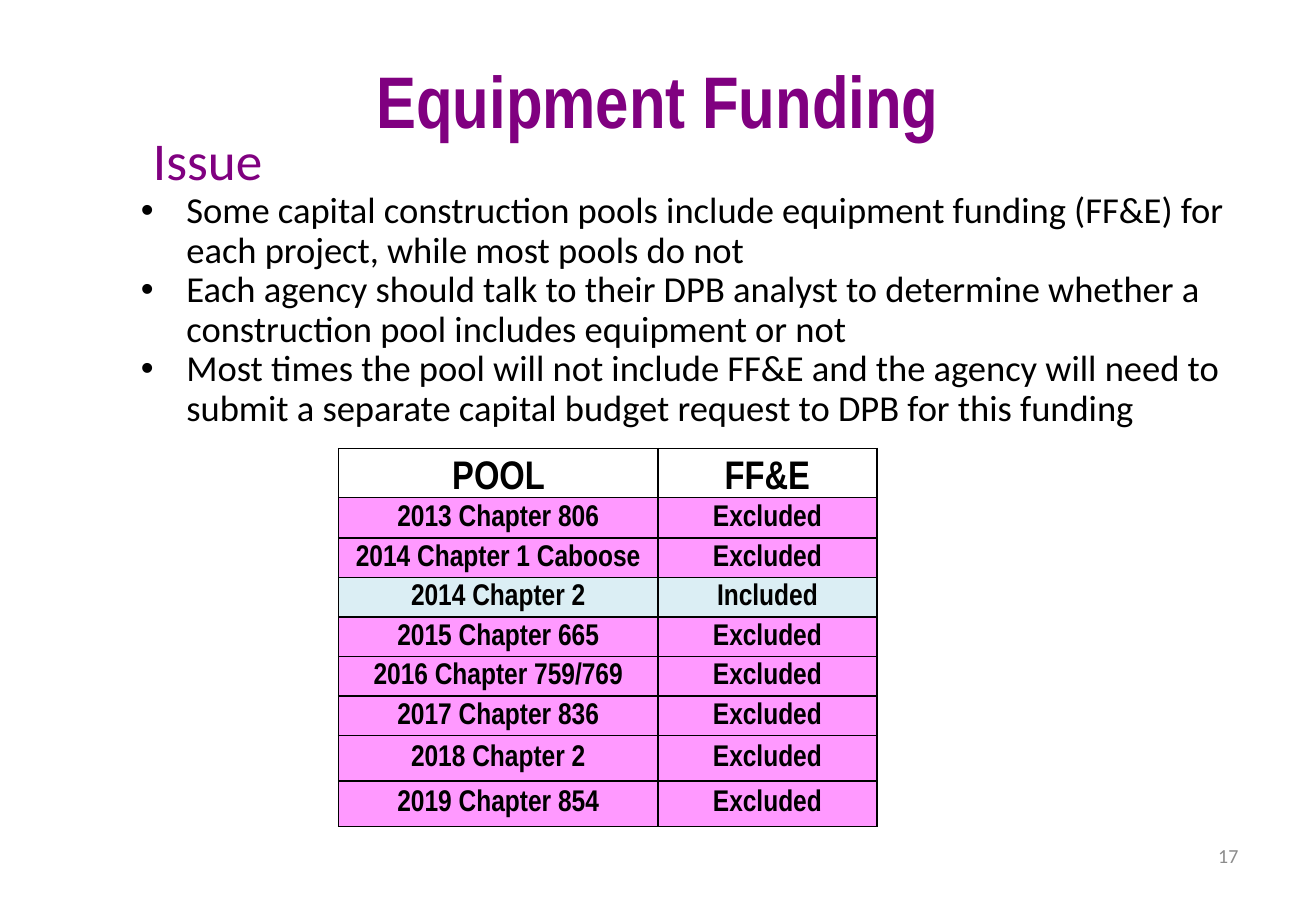
from lxml.etree import SubElement
from pptx import Presentation
from pptx.dml.color import RGBColor
from pptx.enum.text import MSO_ANCHOR as Anchor, MSO_AUTO_SIZE as AutoSize, PP_ALIGN as Align
from pptx.oxml.ns import qn
from pptx.util import Pt

PX = 9144
PURPLE, BLACK, GREY, PINK, PALE_BLUE, WHITE = "800080", "000000", "8C8C8C", "FF99FF", "DBEEF4", "FFFFFF"
NARROW, PLAIN = "Arial Narrow", "Calibri"

TITLE = "Equipment Funding"
HEADING = " Issue"
BULLETS = [
    "Some capital construction pools include equipment funding (FF&E) for each project, while most pools do not",
    "Each agency should talk to their DPB analyst to determine whether a construction pool includes equipment or not",
    "Most times the pool will not include FF&E and the agency will need to submit a separate capital budget request to DPB for this funding",
]
PAGE_NUMBER = "17"
POOLS = [
    (" POOL ", "FF&E"),
    ("2013 Chapter 806", "Excluded"),
    ("2014 Chapter 1 Caboose", "Excluded"),
    ("2014 Chapter 2", "Included"),
    ("2015 Chapter 665", "Excluded"),
    ("2016 Chapter 759/769", "Excluded"),
    ("2017 Chapter 836", "Excluded"),
    ("2018 Chapter 2", "Excluded"),
    ("2019 Chapter 854", "Excluded"),
]
FILLS = {"Excluded": PINK, "Included": PALE_BLUE}
COLUMN_WIDTHS = [267, 183]
ROW_HEIGHTS = [39, 34] + [33] * 5 + [38] * 2

TITLE_BOX = (-25, 8, 1150, 114)
BODY_BOX = (108, 108, 928, 583)
NUMBER_BOX = (788, 695, 257, 40)
TABLE_BOX = (283, 375, sum(COLUMN_WIDTHS), sum(ROW_HEIGHTS))

TITLE_FONT = dict(size=Pt(44), name=NARROW, bold=True, color=PURPLE)
HEADING_FONT = dict(size=Pt(32), name=PLAIN, color=PURPLE)
BULLET_FONT = dict(size=Pt(22), name=PLAIN, color=BLACK)
NUMBER_FONT = dict(size=Pt(12), name=PLAIN, color=GREY)
HEADER_FONT = dict(size=Pt(24), name=NARROW, bold=True, color=BLACK)
CELL_FONT = dict(HEADER_FONT, size=Pt(18))


def rgb(value):
    """Turn a hex string into a colour."""
    return RGBColor.from_string(value)


def scaled(box):
    """Turn px lengths into EMU."""
    return [length * PX for length in box]


def assign(target, values):
    """Set attributes from a dict."""
    for name, value in values.items():
        setattr(target, name, value)


def write(para, text, font, **layout):
    """Add one formatted span to a paragraph."""
    assign(para, layout)
    span = para.add_run()
    span.text = text
    assign(span.font, {name: value for name, value in font.items() if name != "color"})
    span.font.color.rgb = rgb(font["color"])


def hang(para, bullet=None):
    """Give a paragraph a hanging indent and an optional bullet."""
    properties = para._p.get_or_add_pPr()
    properties.set("marL", str(38 * PX))
    properties.set("indent", str(-38 * PX))
    if bullet:
        SubElement(properties, qn("a:buFont"), typeface="Arial")
        SubElement(properties, qn("a:buChar"), char=bullet)


def add_text_box(page, box, anchor):
    """Add a wrapping text box and return its frame."""
    frame = page.shapes.add_textbox(*scaled(box)).text_frame
    assign(frame, dict(word_wrap=True, vertical_anchor=anchor))
    return frame


def add_title(page):
    """Place and format the title placeholder."""
    title = page.shapes.title
    assign(title, dict(zip(("left", "top", "width", "height"), scaled(TITLE_BOX))))
    frame = title.text_frame
    assign(frame, dict(word_wrap=True, auto_size=AutoSize.NONE, vertical_anchor=Anchor.MIDDLE))
    para = frame.paragraphs[0]
    write(para, TITLE, TITLE_FONT, alignment=Align.CENTER, line_spacing=1.5)
    hang(para)


def add_body(page):
    """Add the heading and its bullets."""
    frame = add_text_box(page, BODY_BOX, Anchor.TOP)
    heading = frame.paragraphs[0]
    write(heading, HEADING, HEADING_FONT, line_spacing=0.9)
    hang(heading)
    for text in BULLETS:
        para = frame.add_paragraph()
        write(para, text, BULLET_FONT, line_spacing=0.9)
        hang(para, "•")


def outline(cell):
    """Draw a thin black border on every side of a cell."""
    properties = cell._tc.get_or_add_tcPr()
    for position, side in enumerate(("lnL", "lnR", "lnT", "lnB")):
        line = SubElement(properties, qn(f"a:{side}"), w=str(Pt(1)))
        fill = SubElement(line, qn("a:solidFill"))
        SubElement(fill, qn("a:srgbClr"), val=BLACK)
        properties.insert(position, line)


def add_pool_table(page):
    """Add the table of pools."""
    table = page.shapes.add_table(len(POOLS), len(COLUMN_WIDTHS), *scaled(TABLE_BOX)).table
    for column, width in zip(table.columns, COLUMN_WIDTHS):
        column.width = width * PX
    for index, (values, height) in enumerate(zip(POOLS, ROW_HEIGHTS)):
        table.rows[index].height = height * PX
        font, anchor = (CELL_FONT, Anchor.MIDDLE) if index else (HEADER_FONT, Anchor.BOTTOM)
        for cell, text in zip(table.rows[index].cells, values):
            assign(cell, dict(margin_left=PX, margin_right=PX, margin_top=PX, margin_bottom=0, vertical_anchor=anchor))
            cell.fill.solid()
            cell.fill.fore_color.rgb = rgb(FILLS.get(values[1], WHITE))
            outline(cell)
            write(cell.text_frame.paragraphs[0], text, font, alignment=Align.CENTER)


def main():
    """Build the deck and save it."""
    deck = Presentation()
    assign(deck, dict(slide_width=1100 * PX, slide_height=750 * PX))
    page = deck.slides.add_slide(deck.slide_layouts[5])
    add_title(page)
    add_body(page)
    number = add_text_box(page, NUMBER_BOX, Anchor.MIDDLE)
    write(number.paragraphs[0], PAGE_NUMBER, NUMBER_FONT, alignment=Align.RIGHT)
    add_pool_table(page)
    deck.save("out.pptx")


if __name__ == "__main__":
    main()
